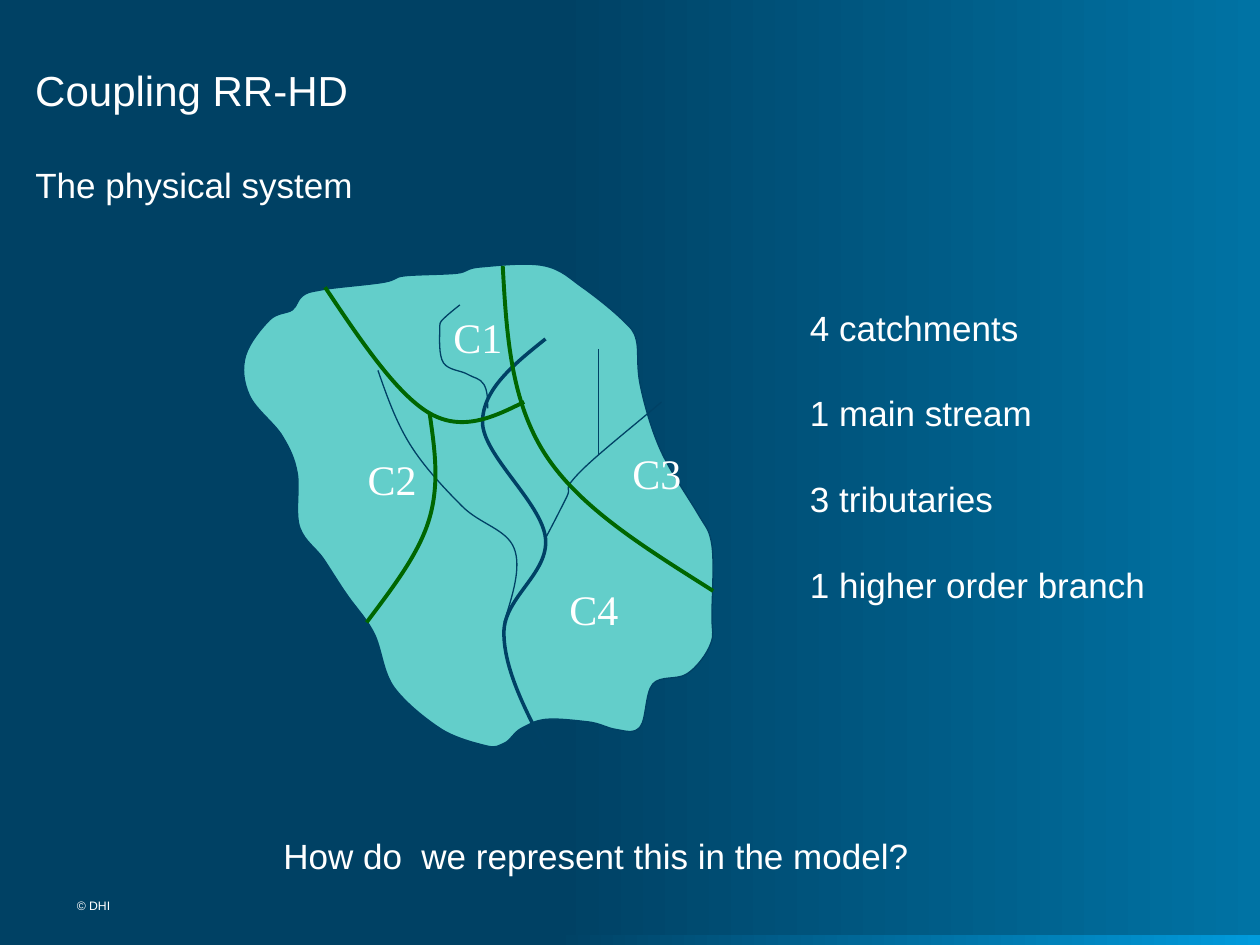
"""Build the slide on the physical catchment system for RR-HD coupling."""
from dataclasses import dataclass

import pptx
import pptx.dml.color
import pptx.enum.shapes
import pptx.enum.text
import pptx.oxml
import pptx.oxml.ns
import pptx.util

PX = 9144
NAVY, GREEN, WHITE, LAND = "004165", "006600", "FFFFFF", "63CECA"
GRADIENT_START = "004164"
Anchor = pptx.enum.text.MSO_ANCHOR
Point = tuple[int, int]


@dataclass(frozen=True)
class Curve:
    """Points in px that a smooth curve passes; a filled curve is closed."""
    points: tuple[Point, ...]
    color: str = NAVY
    weight: float = 0.75
    fill: str | None = None


@dataclass(frozen=True)
class Label:
    """A catchment name and the corner of its box, in px."""
    text: str
    left: int
    top: int


CATCHMENT = Curve((
    (256, 230), (240, 235), (232, 246), (214, 254), (195, 282), (198, 314), (224, 346),
    (236, 376), (238, 419), (257, 444), (276, 473), (297, 503), (313, 546), (349, 578),
    (386, 592), (400, 590), (414, 578), (433, 571), (467, 573), (489, 579), (508, 577),
    (518, 543), (545, 535), (564, 511), (565, 489), (565, 433), (554, 408), (525, 359),
    (508, 305), (505, 270), (494, 254), (462, 228), (432, 211), (381, 212), (362, 217),
    (321, 219), (305, 224)), fill=LAND)

STREAMS = (
    Curve(((433, 269), (383, 335), (433, 427), (400, 502), (433, 594)), weight=2),
    Curve(((525, 319), (458, 377), (450, 394), (433, 427))),
    Curve(((300, 294), (325, 352), (367, 402), (408, 435), (400, 494))),
    Curve(((365, 242), (352, 253), (349, 262), (352, 288), (371, 297), (384, 305), (387, 324))),
)

DIVIDES = tuple(Curve(points, GREEN, 2.25) for points in (
    ((399, 211), (433, 361), (566, 469)),
    ((258, 228), (341, 328), (416, 319)),
    ((341, 328), (341, 411), (291, 494)),
))

LABELS = (Label("C2", 282, 355), Label("C1", 350, 242),
          Label("C3", 492, 350), Label("C4", 442, 458))


def rgb(color: str) -> pptx.dml.color.RGBColor:
    """Turn a hex string into a colour."""
    return pptx.dml.color.RGBColor.from_string(color)


def set_gradient(fill, *colors: str) -> None:
    """Fill from left to right, starting at 44 percent."""
    fill.gradient()
    fill.gradient_angle = 0
    for stop, position, color in zip(fill.gradient_stops, (0.44, 1), colors):
        stop.position = position
        stop.color.rgb = rgb(color)


def add_text(shapes, text: str, left: int, top: int, width: int, height: int, *,
             size: int = 20, font: str = "Arial", anchor=Anchor.TOP,
             framed: bool = False, gap: int = 0) -> None:
    """Add a white text box; a framed one wraps and has no margins."""
    box = shapes.add_textbox(*(PX * length for length in (left, top, width, height)))
    frame = box.text_frame
    frame.word_wrap = framed
    frame.vertical_anchor = anchor
    if framed:
        frame.margin_left = frame.margin_right = frame.margin_top = frame.margin_bottom = 0
    else:
        frame.auto_size = pptx.enum.text.MSO_AUTO_SIZE.SHAPE_TO_FIT_TEXT
    frame.text = text
    for index, para in enumerate(frame.paragraphs):
        if index and gap:
            para.space_before = pptx.util.Pt(gap)
        for span in para.runs:
            span.font.size = pptx.util.Pt(size)
            span.font.name = font
            span.font.color.rgb = rgb(WHITE)


def between(start: Point, end: Point) -> Point:
    """Find the middle of two points."""
    return round((start[0] + end[0]) / 2), round((start[1] + end[1]) / 2)


def bezier_points(points: tuple[Point, ...], closed: bool) -> list[Point]:
    """List two controls and an end for each segment of a Catmull-Rom curve."""
    count = len(points)
    result = []
    for index in range(count if closed else count - 1):
        before, start, end, after = (points[(index + step) % count] for step in (-1, 0, 1, 2))
        leave = tuple(round(s + (e - b) / 6) for b, s, e in zip(before, start, end))
        arrive = tuple(round(e - (a - s) / 6) for s, e, a in zip(start, end, after))
        if not closed and index == 0:
            leave = between(start, arrive)
        if not closed and index == count - 2:
            arrive = between(leave, end)
        result += [leave, arrive, end]
    return result


def add_curve(shapes, curve: Curve) -> None:
    """Draw a freeform and turn each three of its segments into one Bezier."""
    closed = curve.fill is not None
    builder = shapes.build_freeform(*curve.points[0], scale=PX)
    builder.add_line_segments(bezier_points(curve.points, closed), close=closed)
    shape = builder.convert_to_shape()
    segments = list(shape._element.iter(pptx.oxml.ns.qn("a:lnTo")))
    for first in range(0, len(segments), 3):
        bezier = pptx.oxml.parse_xml(f"<a:cubicBezTo {pptx.oxml.ns.nsdecls('a')}/>")
        segments[first].addprevious(bezier)
        for segment in segments[first:first + 3]:
            bezier.append(segment[0])
            segment.getparent().remove(segment)
    if closed:
        shape.fill.solid()
        shape.fill.fore_color.rgb = rgb(curve.fill)
    else:
        shape.fill.background()
    shape.line.color.rgb = rgb(curve.color)
    shape.line.width = pptx.util.Pt(curve.weight)
    shape.shadow.inherit = False


def add_straight_stream(shapes, left: int, top: int, bottom: int) -> None:
    """Draw the vertical tributary."""
    line = shapes.add_connector(pptx.enum.shapes.MSO_CONNECTOR.STRAIGHT,
                                PX * left, PX * top, PX * left, PX * bottom)
    line.line.color.rgb = rgb(NAVY)
    line.line.width = pptx.util.Pt(0.75)
    line._element.spPr.append(
        pptx.oxml.parse_xml(f"<a:effectLst {pptx.oxml.ns.nsdecls('a')}/>"))


def main() -> None:
    """Build and save the deck."""
    deck = pptx.Presentation()
    deck.slide_width, deck.slide_height = PX * 1000, PX * 750
    page = deck.slides.add_slide(deck.slide_layouts[6])
    set_gradient(page.background.fill, GRADIENT_START, "0073A4")
    shapes = page.shapes

    footer = shapes.add_shape(pptx.enum.shapes.MSO_SHAPE.RECTANGLE,
                              0, PX * 742, PX * 1000, PX * 8)
    set_gradient(footer.fill, GRADIENT_START, "009BDC")
    footer.line.fill.background()
    footer.shadow.inherit = False

    add_text(shapes, "Coupling RR-HD", 28, 25, 860, 66, size=24, anchor=Anchor.BOTTOM, framed=True)
    add_text(shapes, "The physical system", 28, 130, 945, 560, framed=True)
    add_text(shapes, "4 catchments\n1 main stream\n3 tributaries\n1 higher order branch",
             633, 238, 288, 246, gap=25)
    add_text(shapes, "How do  we represent this in the model?", 215, 657, 520, 44)

    add_curve(shapes, CATCHMENT)
    streams = shapes.add_group_shape().shapes
    for curve in STREAMS:
        add_curve(streams, curve)
    add_straight_stream(streams, 475, 277, 360)
    divides = shapes.add_group_shape().shapes
    for curve in DIVIDES:
        add_curve(divides, curve)
    names = shapes.add_group_shape().shapes
    for label in LABELS:
        add_text(names, label.text, label.left, label.top, 59, 50, size=24, font="Times New Roman")
    add_text(shapes, "© DHI", 61, 713, 155, 19, size=7, framed=True)
    deck.save("out.pptx")


if __name__ == "__main__":
    main()
